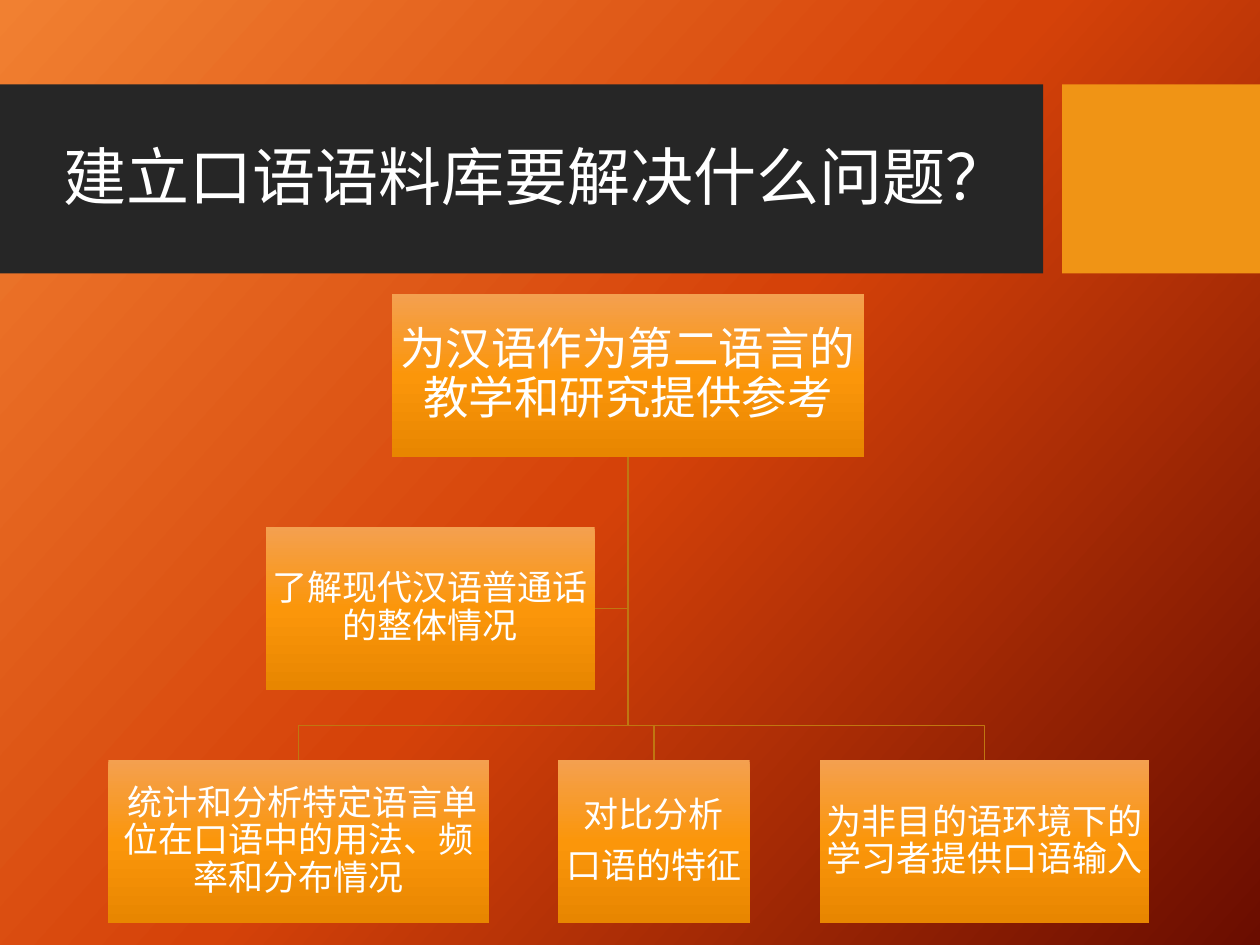
"""Build the slide on what a spoken corpus should solve."""
import dataclasses
import typing

import pptx
import pptx.dml.color
import pptx.enum.shapes
import pptx.enum.text
import pptx.oxml
import pptx.oxml.ns
import pptx.util

Align = pptx.enum.text.PP_ALIGN
Rect = pptx.enum.shapes.MSO_SHAPE.RECTANGLE


@dataclasses.dataclass(frozen=True)
class Theme:
    font: str = "Lato"
    text: str = "FFFFFF"
    dark: str = "262626"
    gold: str = "F09415"
    line: str = "C07711"
    back: tuple = ("F18031", "D54209", "6A0D00")
    box: tuple = ("F4A050", "FB960A", "E88600")
    title: int = 36
    head: int = 26
    body: int = 20
    rule: float = 0.75


@dataclasses.dataclass(frozen=True)
class Grid:
    wide: float = 10
    high: float = 7.5
    cols: int = 10
    top: float = 2.33
    step: float = 1.85
    tall: float = 1.3

    def x(self, col: float) -> int:
        return pptx.util.Inches(self.wide * col / self.cols)

    def y(self, row: float) -> int:
        return pptx.util.Inches(self.top + self.step * row)


@dataclasses.dataclass(frozen=True)
class Node:
    text: str
    col: float
    span: float
    row: int
    size: int
    pad: float = 0.01


THEME = Theme()
GRID = Grid()
ROOT = Node("为汉语作为第二语言的教学和研究提供参考", 3.11, 3.75, 0, THEME.head, 0.02)
SIDE = Node("了解现代汉语普通话的整体情况", 2.11, 2.61, 1, THEME.body)
LEAVES = (
    Node(" 统计和分析特定语言单位在口语中的用法、频率和分布情况", 0.86, 3.02, 2, THEME.body, 0.02),
    Node("对比分析\n口语的特征", 4.43, 1.52, 2, THEME.body),
    Node("为非目的语环境下的学习者提供口语输入", 6.51, 2.61, 2, THEME.body),
)


def tint(code: str) -> pptx.dml.color.RGBColor:
    return pptx.dml.color.RGBColor.from_string(code)


def blend(fill: typing.Any, root: typing.Any, tones: tuple, angle: float) -> None:
    fill.gradient()
    fill.gradient_angle = 360 - angle
    stops = root.find(".//" + pptx.oxml.ns.qn("a:gsLst"))
    for stop in list(stops):
        stops.remove(stop)
    for i, tone in enumerate(tones):
        place = i * 100000 // (len(tones) - 1)
        stops.append(pptx.oxml.parse_xml(
            f'<a:gs {pptx.oxml.ns.nsdecls("a")} pos="{place}">'
            f'<a:srgbClr val="{tone}"/></a:gs>'))


def style(frame: typing.Any, size: int, align: typing.Any, after: float = 0) -> None:
    frame.word_wrap = True
    frame.vertical_anchor = pptx.enum.text.MSO_ANCHOR.MIDDLE
    for para in frame.paragraphs:
        para.alignment = align
        para.line_spacing = 0.9
        para.space_before = pptx.util.Pt(0)
        para.space_after = pptx.util.Pt(after * size)
        for run in para.runs:
            run.font.size = pptx.util.Pt(size)
            run.font.name = THEME.font
            run.font.color.rgb = tint(THEME.text)


def block(shapes: typing.Any, left: int, top: int, wide: int, high: int) -> typing.Any:
    shape = shapes.add_shape(Rect, left, top, wide, high)
    shape.shadow.inherit = False
    shape.line.fill.background()
    return shape


def band(shapes: typing.Any, col: float, span: float, tone: str) -> None:
    shape = block(shapes, GRID.x(col), pptx.util.Inches(0.67),
                  GRID.x(span), pptx.util.Inches(1.5))
    shape.fill.solid()
    shape.fill.fore_color.rgb = tint(tone)


def card(shapes: typing.Any, node: Node) -> None:
    shape = block(shapes, GRID.x(node.col), GRID.y(node.row),
                  GRID.x(node.span), pptx.util.Inches(GRID.tall))
    blend(shape.fill, shape._element, THEME.box, 90)
    frame = shape.text_frame
    frame.text = node.text
    pad = pptx.util.Inches(node.pad)
    frame.margin_left = frame.margin_right = pad
    frame.margin_top = frame.margin_bottom = pad
    style(frame, node.size, Align.CENTER, 0.35)


def elbow(shapes: typing.Any, points: list) -> None:
    pen = shapes.build_freeform(*points[0], scale=1.0)
    pen.add_line_segments(points[1:], close=False)
    shape = pen.convert_to_shape()
    shape.shadow.inherit = False
    shape.fill.background()
    shape.line.color.rgb = tint(THEME.line)
    shape.line.width = pptx.util.Pt(THEME.rule)


def links(shapes: typing.Any) -> None:
    high = pptx.util.Inches(GRID.tall)
    stem = GRID.x(ROOT.col + ROOT.span / 2)
    start = (stem, GRID.y(0) + high)
    mid = GRID.y(SIDE.row) + high // 2
    elbow(shapes, [start, (stem, mid), (GRID.x(SIDE.col + SIDE.span), mid)])
    end = GRID.y(2)
    bar = end - pptx.util.Inches(0.27)
    for leaf in LEAVES:
        x = GRID.x(leaf.col + leaf.span / 2)
        elbow(shapes, [start, (stem, bar), (x, bar), (x, end)])


def main() -> None:
    deck = pptx.Presentation()
    deck.slide_width = pptx.util.Inches(GRID.wide)
    deck.slide_height = pptx.util.Inches(GRID.high)
    slide = deck.slides.add_slide(deck.slide_layouts[5])
    blend(slide.background.fill, slide._element, THEME.back, 42)
    shapes = slide.shapes
    band(shapes, 0, 8.28, THEME.dark)
    band(shapes, 8.43, 1.57, THEME.gold)
    title = shapes.title
    shapes._spTree.append(title._element)
    title.left, title.top = GRID.x(0.4), pptx.util.Inches(0.84)
    title.width, title.height = GRID.x(7.54), pptx.util.Inches(1.18)
    title.text_frame.text = "建立口语语料库要解决什么问题？"
    title.text_frame.auto_size = pptx.enum.text.MSO_AUTO_SIZE.NONE
    style(title.text_frame, THEME.title, Align.LEFT)
    links(shapes)
    for node in (ROOT, *LEAVES, SIDE):
        card(shapes, node)
    deck.save("out.pptx")


if __name__ == "__main__":
    main()
